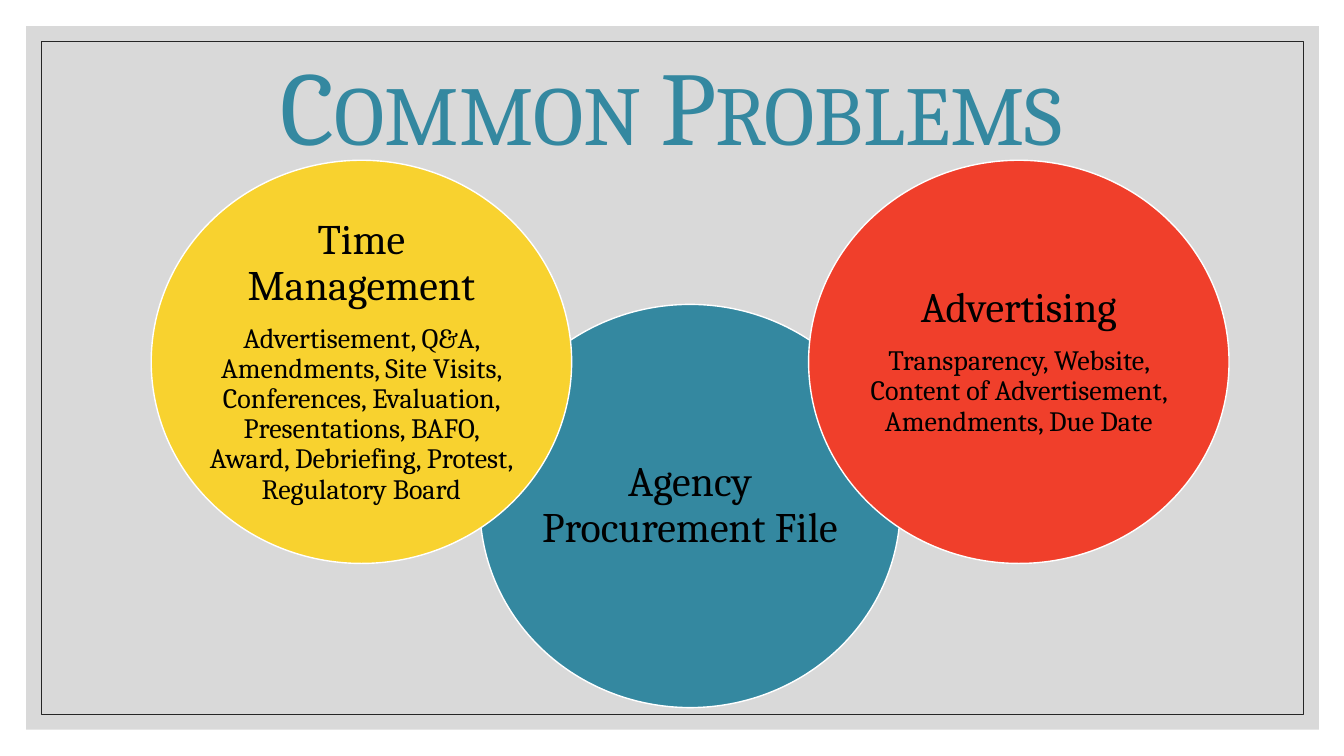
from pptx import Presentation
from pptx.dml.color import RGBColor
from pptx.enum.shapes import MSO_SHAPE
from pptx.enum.text import MSO_ANCHOR, PP_ALIGN
from pptx.util import Inches, Pt

TEAL = "3488A0"
CIRCLES = [
    (4.76, 3.02, TEAL, ["Agency Procurement File"]),
    (1.5, 1.59, "F8D22F", [
        "Time Management",
        "Advertisement, Q&A, Amendments, Site Visits, Conferences, Evaluation, "
        "Presentations, BAFO, Award, Debriefing, Protest, Regulatory Board"]),
    (8.02, 1.59, "F03F2B", [
        "Advertising",
        "Transparency, Website, Content of Advertisement, Amendments, Due Date"]),
]


def paint(color, hue):
    """Set a colour from a hex string."""
    color.rgb = RGBColor.from_string(hue)


def add_shape(slide, kind, box, fill, line, width):
    """Add a flat shape, with None for no fill or no line."""
    shape = slide.shapes.add_shape(kind, *map(Inches, box))
    shape.shadow.inherit = False
    if fill:
        shape.fill.solid()
        paint(shape.fill.fore_color, fill)
    else:
        shape.fill.background()
    if line:
        paint(shape.line.color, line)
        shape.line.width = Pt(width)
    else:
        shape.line.fill.background()
    return shape


def style(para, size, hue):
    """Centre a paragraph and format its runs."""
    para.alignment = PP_ALIGN.CENTER
    para.line_spacing = 0.9
    for run in para.runs:
        run.font.name = "Cambria"
        run.font.size = Pt(size)
        paint(run.font.color, hue)


def add_frame(slide, left, top, width, height):
    """Draw the grey panel and the thin border inside it."""
    gap = 0.15
    add_shape(slide, MSO_SHAPE.RECTANGLE, (left, top, width, height), "D9D9D9", None, 0)
    inner = (left + gap, top + gap, width - 2 * gap, height - 2 * gap)
    add_shape(slide, MSO_SHAPE.RECTANGLE, inner, None, "262626", 0.5)


def add_title(slide, left, top, width, height):
    """Place the title in small capitals, in front of the panel."""
    title = slide.shapes.title
    slide.shapes._spTree.append(title._element)
    title.left, title.top = Inches(left), Inches(top)
    title.width, title.height = Inches(width), Inches(height)
    frame = title.text_frame
    frame.text = "Common Problems"
    frame.vertical_anchor = MSO_ANCHOR.MIDDLE
    para = frame.paragraphs[0]
    style(para, 74.7, TEAL)
    para.runs[0].font._element.set("cap", "small")


def add_circle(slide, left, top, width, height, fill, lines):
    """Draw a circle with a heading and an optional list below it."""
    box = (left, top, width, height)
    shape = add_shape(slide, MSO_SHAPE.OVAL, box, fill, "FFFFFF", 1)
    frame = shape.text_frame
    frame.word_wrap = True
    frame.vertical_anchor = MSO_ANCHOR.MIDDLE
    frame.margin_left = frame.margin_right = Inches(-0.03)
    frame.margin_top = frame.margin_bottom = Inches(0)
    frame.text = "\n".join(lines)
    for para, size in zip(frame.paragraphs, (30, 20)):
        style(para, size, "000000")
        para.space_after = Pt(size * 0.35)


def main():
    """Build the slide and save it."""
    deck = Presentation()
    deck.slide_width, deck.slide_height = Inches(13.33), Inches(7.5)
    slide = deck.slides.add_slide(deck.slide_layouts[5])
    add_frame(slide, 0.26, 0.26, 12.82, 6.98)
    add_title(slide, 0.41, 0.48, 12.5, 1.25)
    for left, top, fill, lines in CIRCLES:
        add_circle(slide, left, top, 4.17, 4, fill, lines)
    deck.save("out.pptx")


if __name__ == "__main__":
    main()
